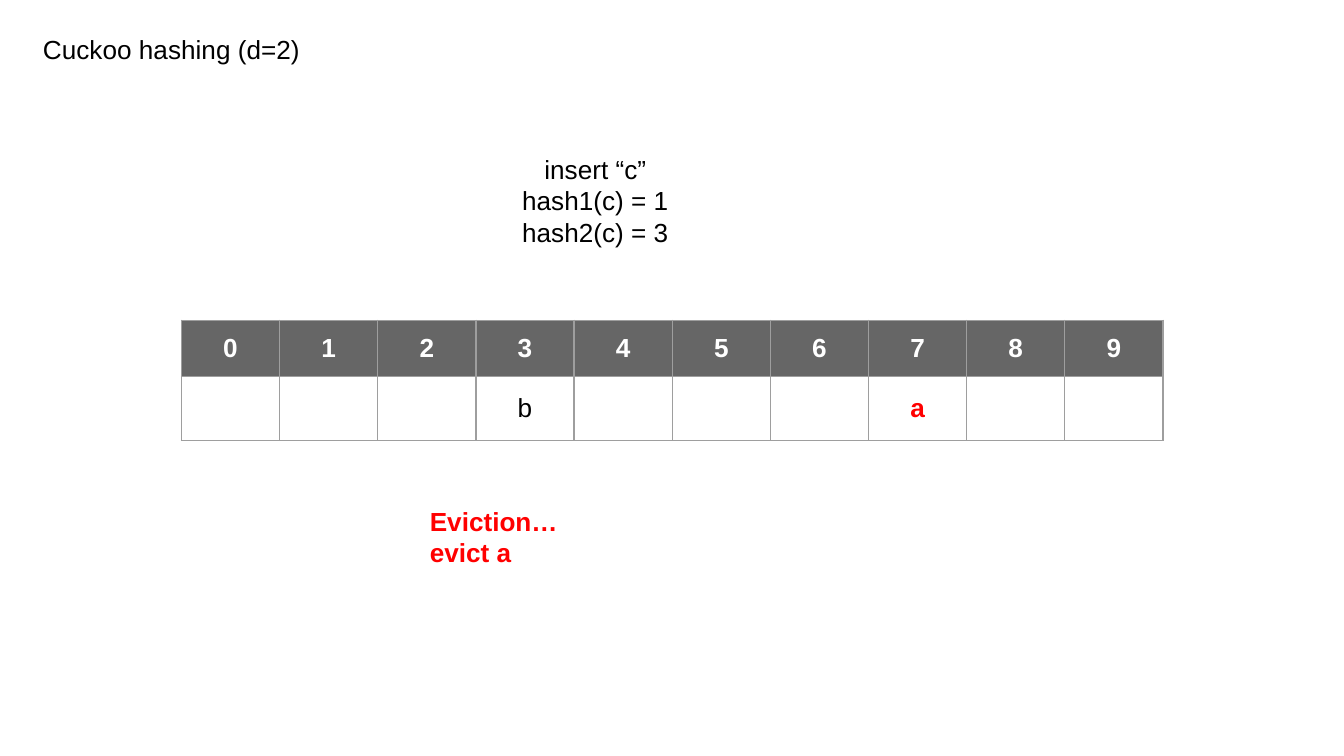
from lxml.etree import SubElement
from pptx import Presentation
from pptx.dml.color import RGBColor
from pptx.enum.text import MSO_ANCHOR, MSO_AUTO_SIZE, PP_ALIGN
from pptx.oxml.ns import qn
from pptx.util import Pt

INSET = Pt(7.2)


def style_paragraph(paragraph, color, bold=False, align=PP_ALIGN.LEFT):
    paragraph.alignment = align
    paragraph.font.name = "Arial"
    paragraph.font.size = Pt(14)
    paragraph.font.bold = bold
    paragraph.font.color.rgb = RGBColor.from_string(color)


def add_borders(cell, color, width):
    properties = cell._tc.get_or_add_tcPr()
    for side in ("a:lnL", "a:lnR", "a:lnT", "a:lnB"):
        line = SubElement(properties, qn(side), w=str(Pt(width)))
        fill = SubElement(line, qn("a:solidFill"))
        SubElement(fill, qn("a:srgbClr"), val=color)


presentation = Presentation()
presentation.slide_width = Pt(720)
presentation.slide_height = Pt(405)
slide = presentation.slides.add_slide(presentation.slide_layouts[5])

# Hash table: slot numbers above, stored keys below
slots = 10
stored = {3: ("b", "000000", False), 7: ("a", "FF0000", True)}
hash_table = slide.shapes.add_table(
    2, slots, Pt(97.2), Pt(171.6), Pt(52.6 * slots), Pt(64.5)).table
hash_table.first_row = False
hash_table.horz_banding = False
hash_table.rows[0].height = Pt(30.2)
hash_table.rows[1].height = Pt(34.3)

for slot in range(slots):
    hash_table.columns[slot].width = Pt(52.6)
    slot_number = (str(slot), "FFFFFF", True)
    key = stored.get(slot, ("", "000000", False))
    for row, (text, color, bold) in enumerate((slot_number, key)):
        cell = hash_table.cell(row, slot)
        cell.text = text
        cell.vertical_anchor = MSO_ANCHOR.MIDDLE
        cell.margin_left = cell.margin_right = INSET
        cell.margin_top = cell.margin_bottom = INSET
        style_paragraph(cell.text_frame.paragraphs[0], color, bold, PP_ALIGN.CENTER)
        add_borders(cell, "9E9E9E", 0.75)
        if row == 0:
            cell.fill.solid()
            cell.fill.fore_color.rgb = RGBColor.from_string("666666")
        else:
            cell.fill.background()

# Title, insertion and eviction
title = slide.shapes.title
insertion = slide.shapes.add_textbox(0, 0, 0, 0)
eviction = slide.shapes.add_textbox(0, 0, 0, 0)
captions = (
    (title, (15.8, 10.8, 197.3, 36), "Cuckoo hashing (d=2)",
     "000000", False, PP_ALIGN.LEFT),
    (insertion, (220.3, 74.9, 197.3, 59.8), "insert “c”\nhash1(c) = 1\nhash2(c) = 3",
     "000000", False, PP_ALIGN.CENTER),
    (eviction, (223.2, 263.5, 84.2, 30.2), "Eviction…\nevict a",
     "FF0000", True, PP_ALIGN.LEFT),
)
for caption, box, text, color, bold, align in captions:
    caption.left, caption.top, caption.width, caption.height = map(Pt, box)
    frame = caption.text_frame
    frame.text = text
    frame.word_wrap = True
    frame.auto_size = MSO_AUTO_SIZE.NONE
    frame.vertical_anchor = MSO_ANCHOR.TOP
    frame.margin_left = frame.margin_right = INSET
    frame.margin_top = frame.margin_bottom = INSET
    for paragraph in frame.paragraphs:
        style_paragraph(paragraph, color, bold, align)

presentation.save("out.pptx")
